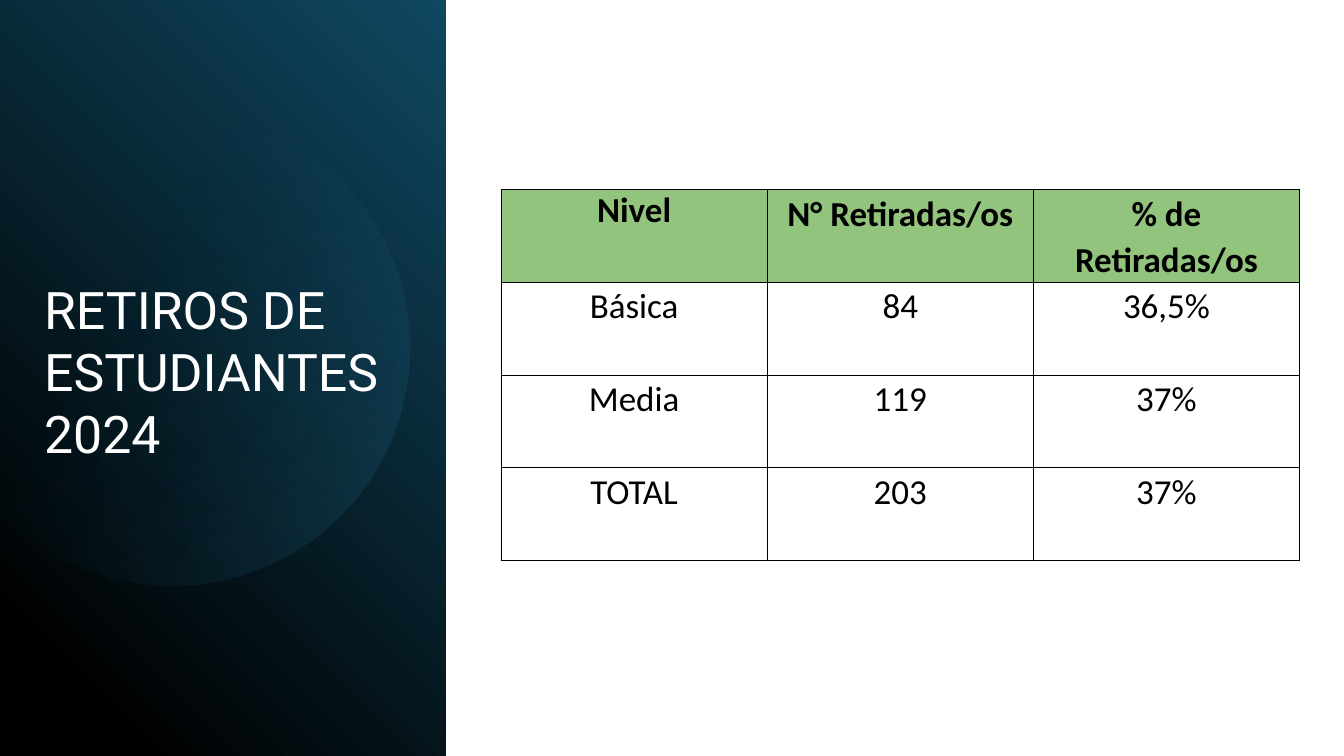
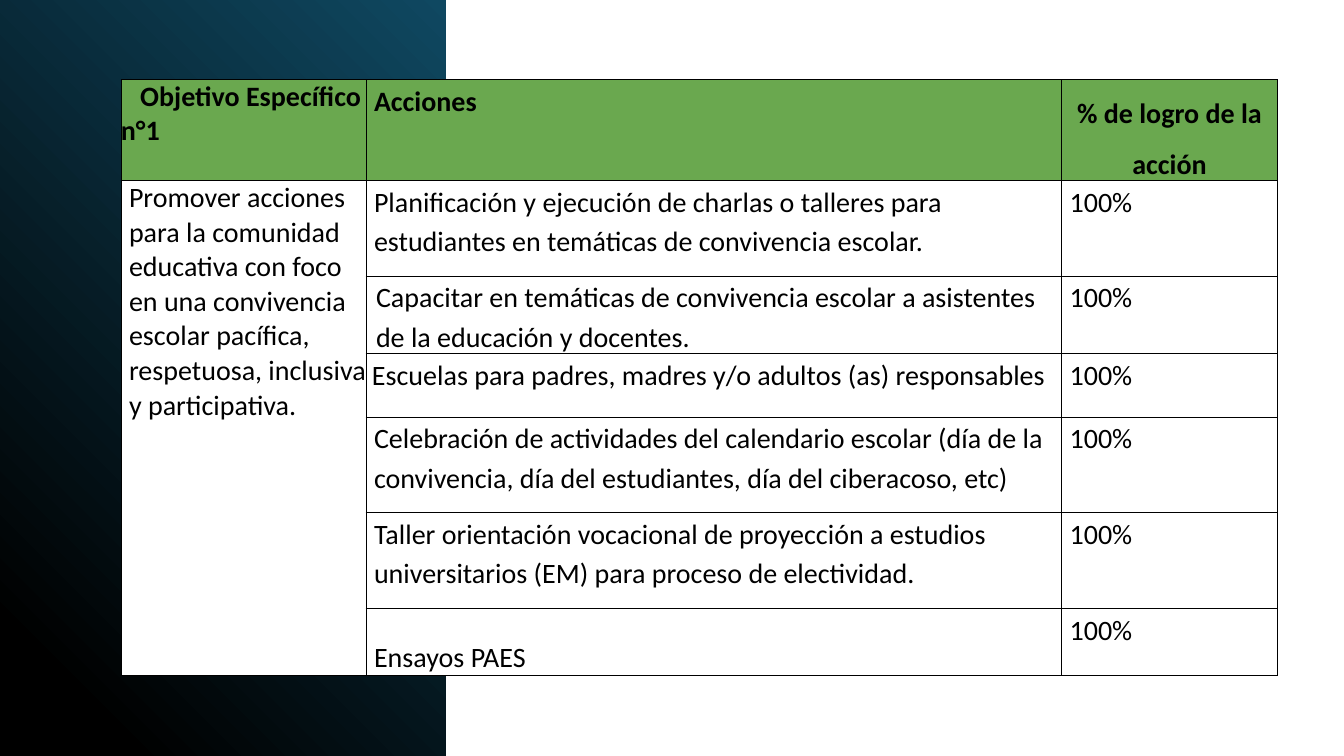
from dataclasses import dataclass

from lxml import etree
from pptx import Presentation
from pptx.dml.color import RGBColor
from pptx.enum.shapes import MSO_SHAPE
from pptx.enum.text import MSO_ANCHOR, PP_ALIGN
from pptx.oxml import parse_xml
from pptx.oxml.ns import nsdecls, qn
from pptx.util import Inches, Pt

SLIDE_W, SLIDE_H = Inches(13.33), Inches(7.5)

BLACK, WHITE = "000000", "FFFFFF"
NAVY, TEAL, SKY = "0F4861", "156082", "43AFE2"
LIGHT_GREEN, GREEN = "93C47D", "6AA84F"
TITLE_FONT, TABLE_FONT = "Roboto", "Calibri"


@dataclass
class Box:
    """A region in percent of the slide's width (x, w) and height (y, h)."""
    x: float
    y: float
    w: float
    h: float

    def emu(self):
        return (int(SLIDE_W * self.x / 100), int(SLIDE_H * self.y / 100),
                int(SLIDE_W * self.w / 100), int(SLIDE_H * self.h / 100))


@dataclass
class Entry:
    """One table cell; margin and first_line are indents in inches."""
    text: str
    bold: bool = False
    align: PP_ALIGN = PP_ALIGN.LEFT
    spacing: float = 1.15
    after: float = 0
    margin: float = 0
    first_line: float = 0
    anchor: MSO_ANCHOR = MSO_ANCHOR.TOP


@dataclass
class TableLook:
    size: int
    header_color: str
    side_margin: float = 0


BAND = Box(0, 0, 33.16, 100)
GLOW = Box(-4.95, 14.53, 35.41, 62.93)
TITLE = Box(2.55, 35.4, 28.13, 30)
WITHDRAWALS = Box(37.28, 25.07, 59.41, 49.07)
ACTIONS = Box(9, 10.53, 86.05, 78.53)


def rgb(color):
    return RGBColor.from_string(color)


def add_gradient_shape(slide, preset, box, stops, angle):
    """Stops are (position %, colour, opacity %); angle runs clockwise."""
    shape = slide.shapes.add_shape(preset, *box.emu())
    shape.shadow.inherit = False
    shape.line.fill.background()
    stop_xml = "".join(
        f'<a:gs pos="{position * 1000}"><a:srgbClr val="{color}">'
        f'<a:alpha val="{opacity * 1000}"/></a:srgbClr></a:gs>'
        for position, color, opacity in stops)
    gradient = parse_xml(
        f'<a:gradFill {nsdecls("a")} rotWithShape="1"><a:gsLst>{stop_xml}</a:gsLst>'
        f'<a:lin ang="{angle * 60000}" scaled="0"/></a:gradFill>')
    shape.element.spPr.find(qn("a:prstGeom")).addnext(gradient)


def add_band(slide, box):
    add_gradient_shape(slide, MSO_SHAPE.RECTANGLE, box,
                       [(0, BLACK, 100), (11, BLACK, 100), (100, NAVY, 100)], 315)


def add_glow(slide, box):
    add_gradient_shape(slide, MSO_SHAPE.OVAL, box,
                       [(0, TEAL, 0), (39, TEAL, 0), (100, SKY, 15)], 32)


def add_run(paragraph, text, font, size, color, bold=False):
    run = paragraph.add_run()
    run.text = text
    run.font.name = font
    run.font.size = Pt(size)
    run.font.bold = bold
    run.font.color.rgb = rgb(color)


def add_title(slide, box, lines):
    frame = slide.shapes.add_textbox(*box.emu()).text_frame
    frame.word_wrap = True
    frame.margin_left = frame.margin_right = Inches(0.1)
    frame.margin_top = frame.margin_bottom = Inches(0.1)
    for index, line in enumerate(lines):
        paragraph = frame.add_paragraph() if index else frame.paragraphs[0]
        add_run(paragraph, line, TITLE_FONT, 37, WHITE)


def add_borders(cell):
    properties = cell._tc.get_or_add_tcPr()
    for side in ("lnL", "lnR", "lnT", "lnB"):
        border = etree.SubElement(properties, qn(f"a:{side}"), w=str(Pt(0.5)))
        fill = etree.SubElement(border, qn("a:solidFill"))
        etree.SubElement(fill, qn("a:srgbClr"), val=BLACK)


def style_cell(cell, color, side_margin):
    add_borders(cell)
    cell.fill.solid()
    cell.fill.fore_color.rgb = rgb(color)
    cell.margin_left = cell.margin_right = Inches(side_margin)
    cell.margin_top = cell.margin_bottom = 0


def write_entry(cell, entry, size):
    cell.vertical_anchor = entry.anchor
    paragraph = cell.text_frame.paragraphs[0]
    paragraph.alignment = entry.align
    paragraph.line_spacing = entry.spacing
    paragraph.space_after = Pt(entry.after)
    indents = paragraph._p.get_or_add_pPr()
    indents.set("marL", str(Inches(entry.margin)))
    indents.set("indent", str(Inches(entry.first_line)))
    add_run(paragraph, entry.text, TABLE_FONT, size, BLACK, entry.bold)


def add_grid(slide, box, columns, rows, entries, look):
    """Columns and rows are relative sizes; a None entry joins the cell above."""
    left, top, width, height = box.emu()
    table = slide.shapes.add_table(len(rows), len(columns),
                                   left, top, width, height).table
    table.first_row = table.horz_banding = False
    for column, share in zip(table.columns, columns):
        column.width = int(width * share / sum(columns))
    for row, share in zip(table.rows, rows):
        row.height = int(height * share / sum(rows))
    for r, row_entries in enumerate(entries):
        for c, entry in enumerate(row_entries):
            cell = table.cell(r, c)
            style_cell(cell, WHITE if r else look.header_color, look.side_margin)
            if entry:
                write_entry(cell, entry, look.size)
    for c in range(len(columns)):
        joined = [r for r in range(len(rows)) if entries[r][c] is None]
        if joined:
            table.cell(joined[0] - 1, c).merge(table.cell(joined[-1], c))


def build_withdrawals(slide):
    def centred(text, bold=False, spacing=1.08):
        return Entry(text, bold, PP_ALIGN.CENTER, spacing, after=8)

    levels = [("Básica", "84", "36,5%"),
              ("Media", "119", "37%"),
              ("TOTAL", "203", "37%")]
    header = [centred("Nivel", True, 1),
              centred("N° Retiradas/os", True),
              centred("% de Retiradas/os", True)]
    entries = [header] + [[centred(text) for text in level] for level in levels]

    add_band(slide, BAND)
    add_glow(slide, GLOW)
    add_title(slide, TITLE, ["RETIROS DE ESTUDIANTES", "2024"])
    add_grid(slide, WITHDRAWALS, [1] * 3, [1] * 4, entries,
             TableLook(25, LIGHT_GREEN, 0.07))


def build_actions(slide):
    inset = 0.08
    header = [Entry("Objetivo Específico n°1", True, spacing=1, first_line=0.19),
              Entry("Acciones", True, margin=inset),
              Entry("% de logro de la acción", True, PP_ALIGN.CENTER, 1.5)]
    objective = Entry(
        "Promover acciones para la comunidad educativa con foco en una convivencia "
        "escolar pacífica, respetuosa, inclusiva y participativa.",
        spacing=1.01, margin=inset)
    actions = [
        Entry("Planificación y ejecución de charlas o talleres para estudiantes "
              "en temáticas de convivencia escolar.", margin=inset),
        Entry("Capacitar en temáticas de convivencia escolar a asistentes de la "
              "educación y docentes.", margin=0.1),
        Entry("Escuelas para padres, madres y/o adultos (as) responsables", margin=0.06),
        Entry("Celebración de actividades del calendario escolar (día de la "
              "convivencia, día del estudiantes, día del ciberacoso, etc)", margin=inset),
        Entry("Taller orientación vocacional de proyección a estudios "
              "universitarios (EM) para proceso de electividad.", margin=inset),
        Entry("Ensayos PAES", spacing=1, margin=inset, anchor=MSO_ANCHOR.BOTTOM),
    ]
    entries = [header] + [
        [None if index else objective, action, Entry("100%", margin=inset)]
        for index, action in enumerate(actions)]

    add_band(slide, BAND)
    add_grid(slide, ACTIONS, [2.43, 6.9, 2.14],
             [0.99, 0.95, 0.76, 0.63, 0.95, 0.95, 0.66], entries,
             TableLook(20, GREEN))


def main():
    deck = Presentation()
    deck.slide_width, deck.slide_height = SLIDE_W, SLIDE_H
    blank = deck.slide_layouts[6]
    for build in (build_withdrawals, build_actions):
        build(deck.slides.add_slide(blank))
    deck.save("out.pptx")


if __name__ == "__main__":
    main()
